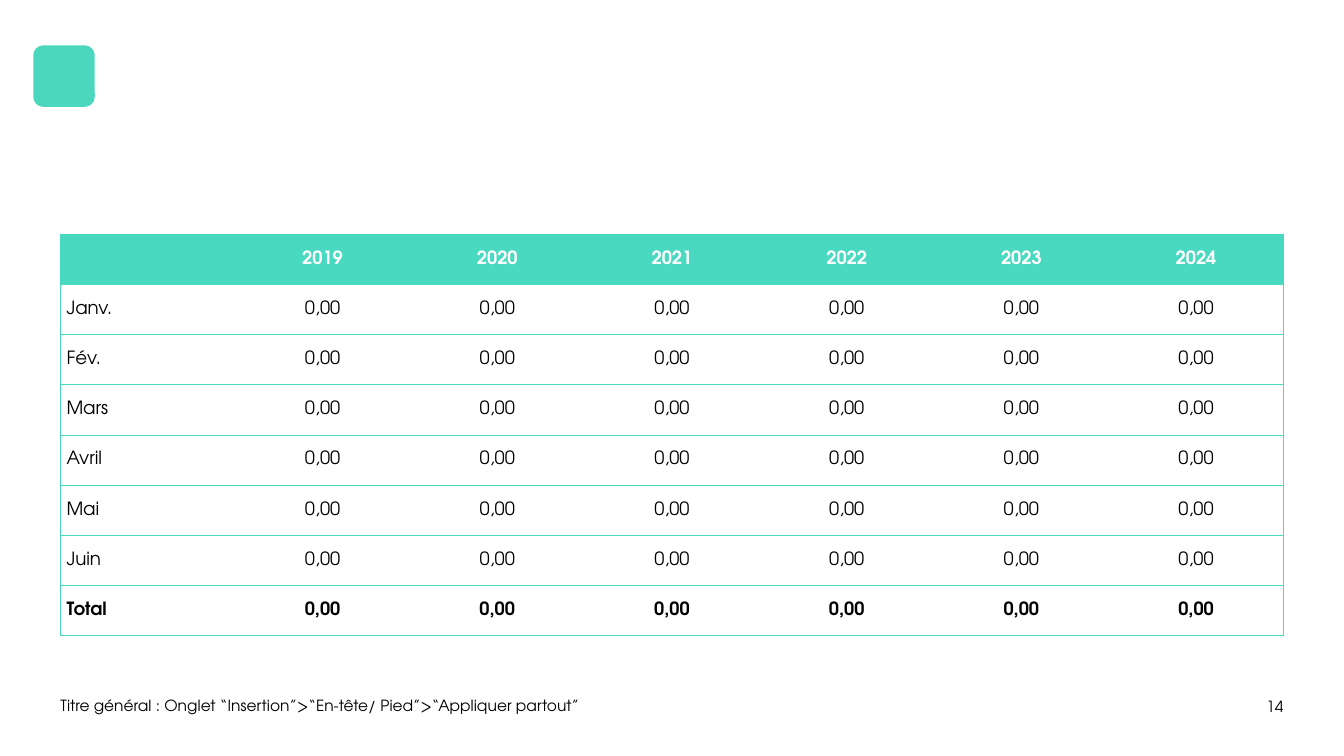
import pptx
import pptx.util
import pptx.dml.color
import pptx.enum.shapes
import pptx.enum.text
import pptx.oxml.ns
import lxml.etree

Inches = pptx.util.Inches
Align = pptx.enum.text.PP_ALIGN
Anchor = pptx.enum.text.MSO_ANCHOR

COLORS = {"logo": "4BD7BE", "teal": "49D9C0", "white": "FFFFFF", "black": "000000"}
FONT = "TeX Gyre Adventor"
YEARS = ["2019", "2020", "2021", "2022", "2023", "2024"]
MONTHS = ["Janv.", "Fév.", "Mars", "Avril", "Mai", "Juin", "Total"]
VALUE = "0,00"


def color(name):
    return pptx.dml.color.RGBColor.from_string(COLORS[name])


def write(frame, text, size=13, ink="black", bold=False, align=Align.LEFT):
    par = frame.paragraphs[0]
    par.alignment = align
    run = par.add_run()
    run.text = text
    run.font.name = FONT
    run.font.size = pptx.util.Pt(size)
    run.font.bold = bold
    run.font.color.rgb = color(ink)


def add_label(slide, box, text, **style):
    frame = slide.shapes.add_textbox(*map(Inches, box)).text_frame
    frame.word_wrap = True
    frame.vertical_anchor = Anchor.BOTTOM
    frame.margin_left = frame.margin_right = 0
    frame.margin_top = frame.margin_bottom = 0
    write(frame, text, size=11, **style)


def add_logo(slide):
    kind = pptx.enum.shapes.MSO_SHAPE.ROUNDED_RECTANGLE
    logo = slide.shapes.add_shape(
        kind, Inches(0.33), Inches(0.45), Inches(0.61), Inches(0.61))
    logo.shadow.inherit = False
    logo.fill.solid()
    logo.fill.fore_color.rgb = color("logo")
    logo.line.fill.background()


def set_edge(cell, side, shown):
    qn = pptx.oxml.ns.qn
    props = cell._tc.get_or_add_tcPr()
    line = lxml.etree.SubElement(props, qn("a:ln" + side), w="6350")
    if shown:
        fill = lxml.etree.SubElement(line, qn("a:solidFill"))
        lxml.etree.SubElement(fill, qn("a:srgbClr"), val=COLORS["teal"])
    else:
        lxml.etree.SubElement(line, qn("a:noFill"))


def style_cell(cell, first, last, fill):
    for side, shown in (("L", first), ("R", last), ("T", True), ("B", True)):
        set_edge(cell, side, shown)
    cell.fill.solid()
    cell.fill.fore_color.rgb = color(fill)
    cell.vertical_anchor = Anchor.MIDDLE
    cell.margin_left = cell.margin_right = Inches(0.06)
    cell.margin_top = cell.margin_bottom = Inches(0.02)


def add_grid(slide):
    rows = [[""] + YEARS] + [[month] + [VALUE] * len(YEARS) for month in MONTHS]
    count = len(rows[0])
    table = slide.shapes.add_table(
        len(rows), count, Inches(0.6), Inches(2.32), Inches(12.13), Inches(3.99)).table
    for r, row in enumerate(rows):
        head = r == 0
        for c, text in enumerate(row):
            cell = table.cell(r, c)
            style_cell(cell, c == 0, c == count - 1, "teal" if head else "white")
            write(cell.text_frame, text, ink="white" if head else "black",
                  bold=head or row[0] == "Total",
                  align=Align.CENTER if c else Align.LEFT)


def main():
    deck = pptx.Presentation()
    deck.slide_width = Inches(13.33)
    deck.slide_height = Inches(7.5)
    slide = deck.slides.add_slide(deck.slide_layouts[6])
    add_logo(slide)
    add_label(slide, (0.6, 6.66, 5.28, 0.43),
              "Titre général : Onglet “Insertion”>“En-tête/ Pied”>“Appliquer partout”")
    add_label(slide, (11.94, 6.86, 0.79, 0.24), "14", align=Align.RIGHT)
    add_grid(slide)
    deck.save("out.pptx")


if __name__ == "__main__":
    main()
